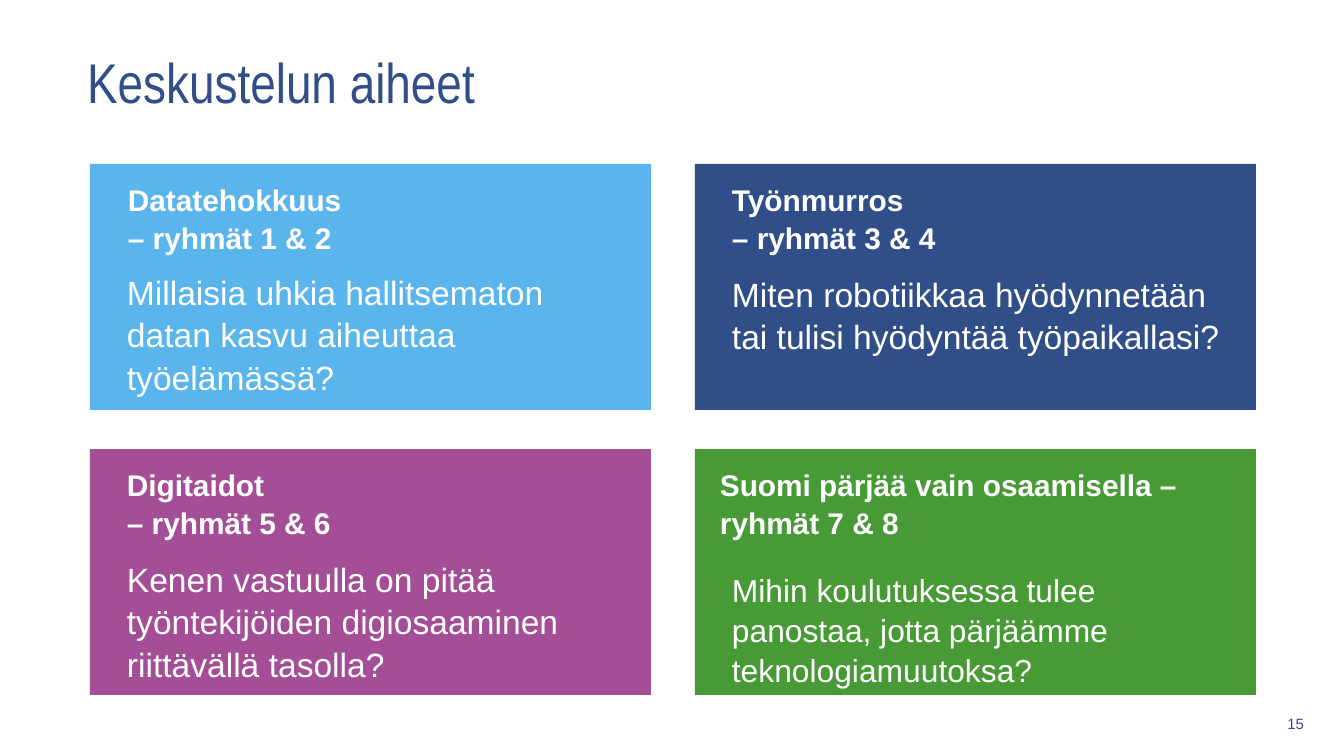
from pptx import Presentation
from pptx.dml.color import RGBColor
from pptx.enum.shapes import MSO_SHAPE
from pptx.enum.text import MSO_ANCHOR, MSO_AUTO_SIZE, PP_ALIGN
from pptx.util import Emu, Pt

NAVY, WHITE = "304E88", "FFFFFF"
CARD_W, CARD_H = 561, 246
LEFT, TOP, COL_STEP, ROW_STEP = 90, 164, 605, 285

CARDS = [
    dict(color="5AB5EC", heading="Datatehokkuus\n– ryhmät 1 & 2", heading_dx=1, question_dy=106,
         question="Millaisia uhkia hallitsematon datan kasvu aiheuttaa työelämässä?"),
    dict(color=NAVY, heading="Työnmurros\n– ryhmät 3 & 4",
         question="Miten robotiikkaa hyödynnetään tai tulisi hyödyntää työpaikallasi?"),
    dict(color="A34E96", heading="Digitaidot\n– ryhmät 5 & 6",
         question="Kenen vastuulla on pitää työntekijöiden digiosaaminen riittävällä tasolla?"),
    dict(color="479A36", heading="Suomi pärjää vain osaamisella – ryhmät 7 & 8",
         heading_dx=-12, heading_w=550, question_dy=120, size=17,
         question="Mihin koulutuksessa tulee panostaa, jotta pärjäämme teknologiamuutoksa?"),
]


def px(n):
    """Convert pixels to EMU."""
    return Emu(round(n * 914400 / 134.4))


def rgb(color):
    """Return the colour for a hex string."""
    return RGBColor.from_string(color)


def write(sp, text, size, color, font="Arial", bold=False, align=PP_ALIGN.LEFT,
          anchor=MSO_ANCHOR.TOP, insets=(13, 7, 13, 7), spacing=1.0):
    """Fill a shape with one formatted paragraph."""
    tf = sp.text_frame
    tf.word_wrap = True
    tf.auto_size = MSO_AUTO_SIZE.NONE
    tf.vertical_anchor = anchor
    tf.margin_left, tf.margin_top, tf.margin_right, tf.margin_bottom = map(px, insets)
    p = tf.paragraphs[0]
    p.text = text
    p.alignment = align
    p.line_spacing = spacing
    p.font.name, p.font.size, p.font.bold = font, Pt(size), bold
    p.font.color.rgb = rgb(color)


def add_title(s, x, y, w, h):
    """Place the slide title."""
    sp = s.shapes.title
    sp.left, sp.top, sp.width, sp.height = map(px, (x, y, w, h))
    write(sp, "Keskustelun aiheet", 30, NAVY, font="Arial Narrow", anchor=MSO_ANCHOR.MIDDLE)


def add_page_number(s, x, y, w, h):
    """Place the page number."""
    sp = s.shapes.add_textbox(*map(px, (x, y, w, h)))
    write(sp, "15", 8, NAVY, align=PP_ALIGN.RIGHT, anchor=MSO_ANCHOR.MIDDLE)


def add_card(s, x, y, w, h, color, heading, question, heading_dx=0, heading_w=CARD_W,
             question_dy=108, size=18):
    """Place a coloured topic card with its heading and question."""
    sp = s.shapes.add_shape(MSO_SHAPE.RECTANGLE, *map(px, (x, y, w, h)))
    sp.shadow.inherit = False
    sp.fill.solid()
    sp.fill.fore_color.rgb = rgb(color)
    sp.line.fill.background()
    write(sp, question, size, WHITE, insets=(37, question_dy, 27, 0), spacing=1.05)
    box = s.shapes.add_textbox(*map(px, (x + heading_dx, y, heading_w, 88)))
    write(box, heading, 16, WHITE, bold=True, insets=(37, 16, 27, 0), spacing=1.05)


def main():
    """Build and save the slide."""
    prs = Presentation()
    prs.slide_width, prs.slide_height = px(1344), px(756)
    s = prs.slides.add_slide(prs.slide_layouts[5])
    add_title(s, 74, 16, 1085, 130)
    for i, card in enumerate(CARDS):
        row, col = divmod(i, 2)
        add_card(s, LEFT + col * COL_STEP, TOP + row * ROW_STEP, CARD_W, CARD_H, **card)
    add_page_number(s, 1247, 708, 70, 32)
    prs.save("out.pptx")


if __name__ == "__main__":
    main()
